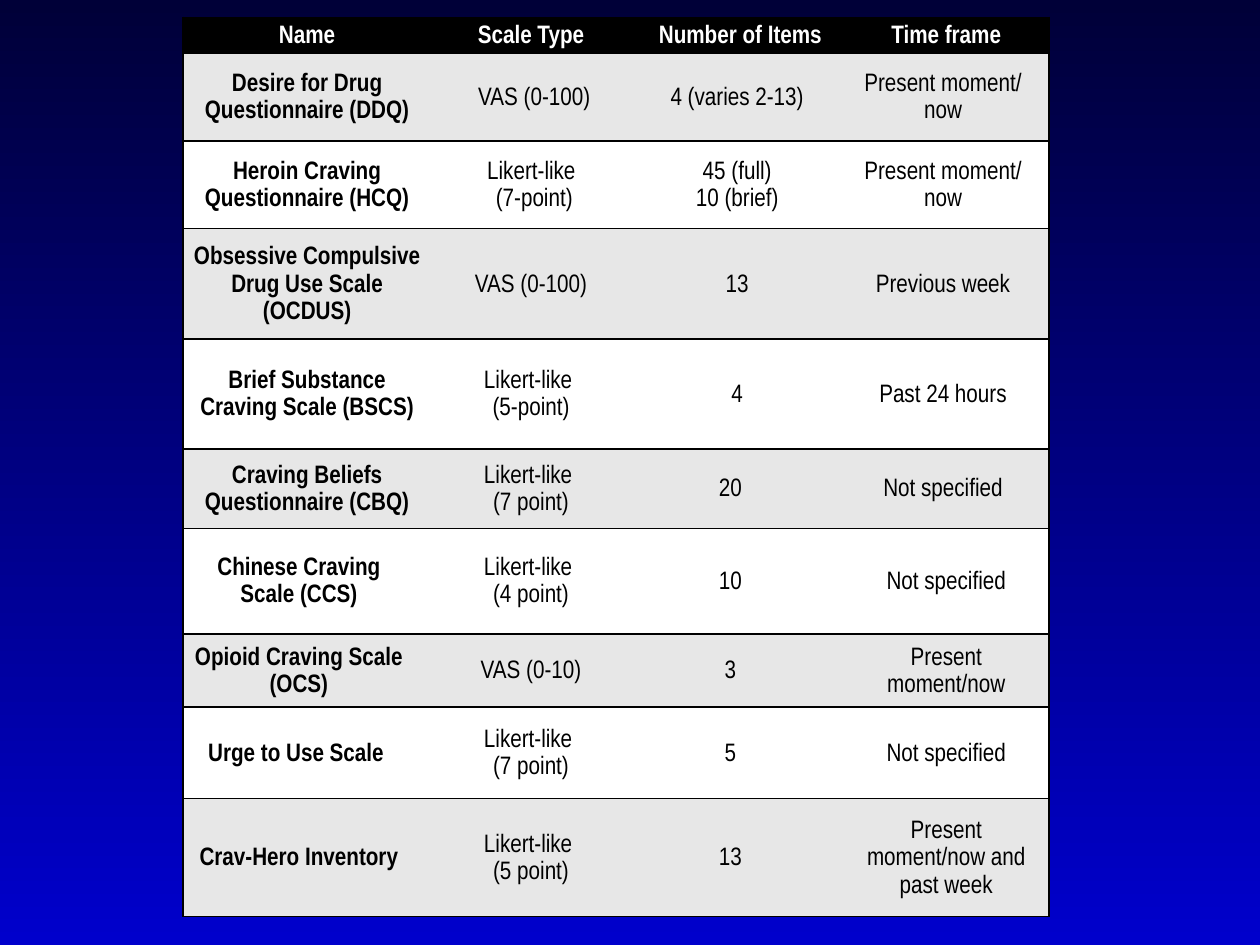
"""Build a one-slide table comparing drug craving scales."""
import lxml.etree
import pptx
import pptx.dml.color
import pptx.enum.text
import pptx.oxml.ns
import pptx.util
from pptx.util import Cm

HEADINGS = ("Name", "Scale Type", "Number of Items", "Time frame")
SCALES = [
    ("Desire for Drug Questionnaire (DDQ)", "VAS (0-100)", "4 (varies 2-13)", "Present moment/ now"),
    ("Heroin Craving Questionnaire (HCQ)", "Likert-like \n(7-point)", "45 (full)\n10 (brief)", "Present moment/ now"),
    ("Obsessive Compulsive Drug Use Scale (OCDUS)", "VAS (0-100)", "13", "Previous week"),
    ("Brief Substance Craving Scale (BSCS)", "Likert-like \n(5-point)", "4", "Past 24 hours"),
    ("Craving Beliefs Questionnaire (CBQ)", "Likert-like \n(7 point)", "20", "Not specified"),
    ("Chinese Craving Scale (CCS)", "Likert-like \n(4 point)", "10", "Not specified"),
    ("Opioid Craving Scale (OCS)", "VAS (0-10)", "3", "Present moment/now"),
    ("Urge to Use Scale ", "Likert-like \n(7 point)", "5", "Not specified"),
    ("Crav-Hero Inventory", "Likert-like \n(5 point)", "13", "Present moment/now and past week"),
]
COLUMN_WIDTHS = (5.0, 4.16, 4.15, 4.15)
ROW_HEIGHTS = (0.72, 1.77, 1.77, 2.22, 2.22, 1.6, 2.13, 1.47, 1.85, 2.38)
EXTRA_RIGHT_MARGINS = (
    [0] * 6 + [0.33] * 4,
    [0.13, 0, 0] + [0.13] * 7,
    [0] + [0.13] * 4 + [0.4] * 5,
    [0] + [0.13] * 5 + [0] * 4,
)
TABLE_LEFT, TABLE_TOP = 3.69, 0.35
SIDE_MARGIN = 0.13
BLACK, WHITE, GREY = "000000", "FFFFFF", "E7E7E7"


def colour(value):
    return pptx.dml.color.RGBColor.from_string(value)


def set_borders(cell, visible):
    properties = cell._tc.get_or_add_tcPr()
    qn = pptx.oxml.ns.qn
    for side in "LRTB":
        line = lxml.etree.SubElement(properties, qn(f"a:ln{side}"), w=str(pptx.util.Pt(1)))
        if side in visible:
            fill = lxml.etree.SubElement(line, qn("a:solidFill"))
            lxml.etree.SubElement(fill, qn("a:srgbClr"), val=BLACK)
        else:
            lxml.etree.SubElement(line, qn("a:noFill"))


def style_cell(cell, text, fill, font_colour, bold, right_margin):
    cell.fill.solid()
    cell.fill.fore_color.rgb = colour(fill)
    cell.vertical_anchor = pptx.enum.text.MSO_ANCHOR.MIDDLE
    cell.margin_left, cell.margin_right = Cm(SIDE_MARGIN), Cm(right_margin)
    cell.margin_top = cell.margin_bottom = 0
    cell.text_frame.text = text
    for para in cell.text_frame.paragraphs:
        para.alignment = pptx.enum.text.PP_ALIGN.CENTER
        para.line_spacing = 1.15
        for span in para.runs:
            span.font.name = "Arial Narrow"
            span.font.size = pptx.util.Pt(14.4)
            span.font.bold = bold
            span.font.color.rgb = colour(font_colour)


def paint_background(page):
    fill = page.background.fill
    fill.gradient()
    fill.gradient_angle = 270
    for stop, value in zip(fill.gradient_stops, ("000038", "0000CC")):
        stop.color.rgb = colour(value)


def add_scale_table(page):
    rows = [HEADINGS] + SCALES
    table = page.shapes.add_table(
        len(rows), len(HEADINGS), Cm(TABLE_LEFT), Cm(TABLE_TOP),
        Cm(sum(COLUMN_WIDTHS)), Cm(sum(ROW_HEIGHTS))).table
    table.horz_banding = False
    for column, width in zip(table.columns, COLUMN_WIDTHS):
        column.width = Cm(width)
    for row, height in zip(table.rows, ROW_HEIGHTS):
        row.height = Cm(height)
    last = len(HEADINGS) - 1
    for r, texts in enumerate(rows):
        header = r == 0
        fill = BLACK if header else GREY if r % 2 else WHITE
        for c, text in enumerate(texts):
            cell = table.cell(r, c)
            set_borders(cell, "TB" + ("L" if c == 0 else "") + ("R" if c == last else ""))
            style_cell(cell, text, fill, WHITE if header else BLACK, header or c == 0,
                       SIDE_MARGIN + EXTRA_RIGHT_MARGINS[c][r])


def main():
    deck = pptx.Presentation()
    deck.slide_width, deck.slide_height = Cm(25.4), Cm(19.05)
    page = deck.slides.add_slide(deck.slide_layouts[6])
    paint_background(page)
    add_scale_table(page)
    deck.save("out.pptx")


if __name__ == "__main__":
    main()
